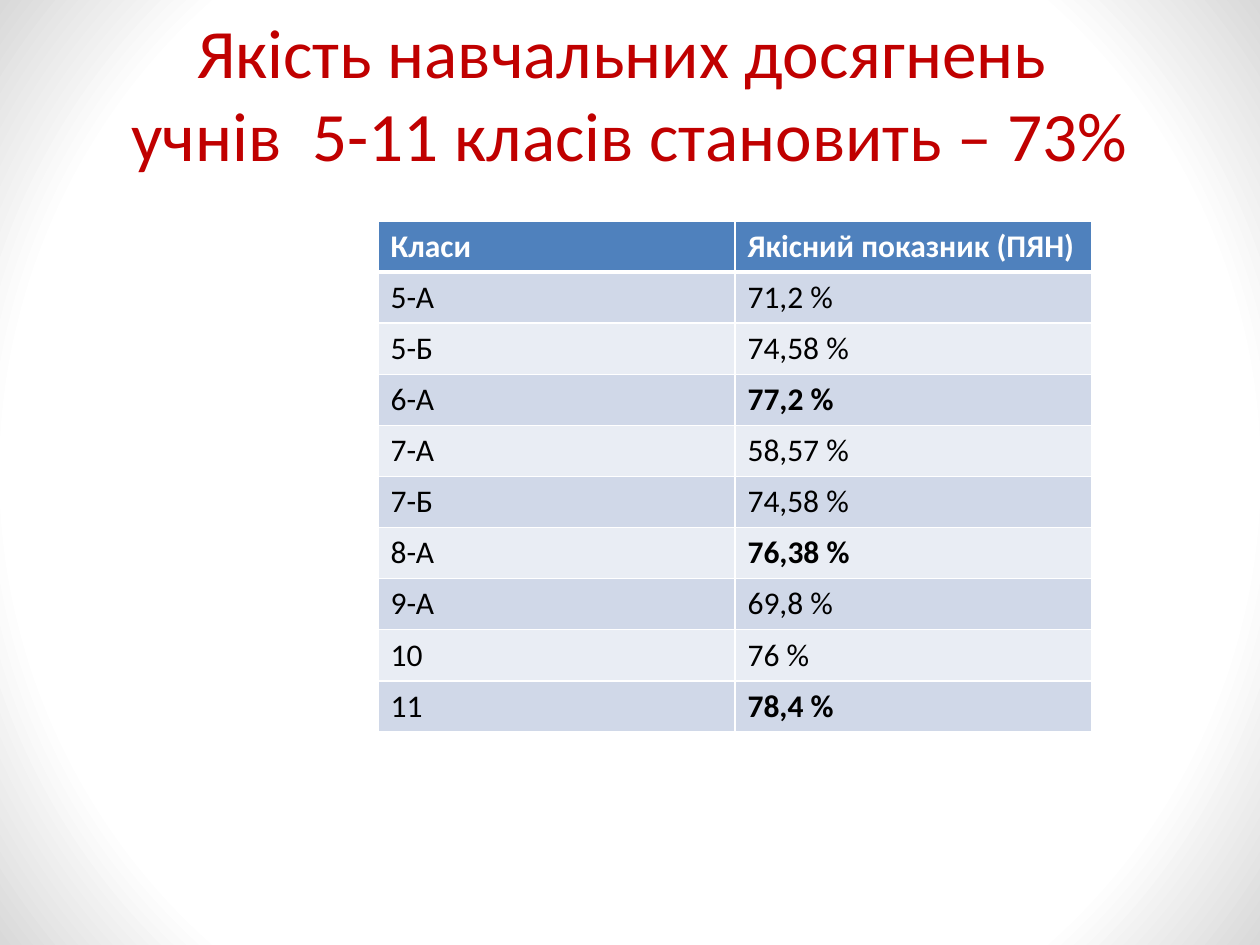
from lxml.etree import SubElement
from pptx import Presentation
from pptx.dml.color import RGBColor
from pptx.enum.text import MSO_ANCHOR, MSO_AUTO_SIZE, PP_ALIGN
from pptx.oxml.ns import qn
from pptx.util import Pt

PX = 914400 // 126
FONT = "Calibri"
WHITE = RGBColor(0xFF, 0xFF, 0xFF)
BLACK = RGBColor(0x00, 0x00, 0x00)
EDGE_GREY = RGBColor(0xD9, 0xD9, 0xD9)
TITLE_RED = RGBColor(0xC0, 0x00, 0x00)
HEADER_BLUE = RGBColor(0x4F, 0x81, 0xBD)
BAND_DARK = RGBColor(0xD0, 0xD8, 0xE8)
BAND_LIGHT = RGBColor(0xE9, 0xED, 0xF4)

TITLE = "Якість навчальних досягнень \vучнів  5-11 класів становить – 73%"
ROWS = [
    ("Класи", "Якісний показник (ПЯН)"),
    ("5-А", "71,2 %"),
    ("5-Б", "74,58 %"),
    ("6-А", "77,2 %"),
    ("7-А", "58,57 %"),
    ("7-Б", "74,58 %"),
    ("8-А", "76,38 %"),
    ("9-А", "69,8 %"),
    ("10", "76 %"),
    ("11", "78,4 %"),
]
HIGHLIGHTS = {"77,2 %", "76,38 %", "78,4 %"}


def add_background(slide):
    """Radial gradient: white centre fading to grey corners."""
    fill = slide.background.fill
    fill.gradient()
    for stop, position, color in zip(fill.gradient_stops, (0.79, 1), (WHITE, EDGE_GREY)):
        stop.position = position
        stop.color.rgb = color
    linear = slide.element.find(".//" + qn("a:lin"))
    gradient = linear.getparent()
    gradient.remove(linear)
    circle = SubElement(gradient, qn("a:path"), path="circle")
    SubElement(circle, qn("a:fillToRect"), l="50000", t="50000", r="50000", b="50000")


def add_title(slide, left, top, width, height):
    title = slide.shapes.title
    title.left, title.top = left * PX, top * PX
    title.width, title.height = width * PX, height * PX
    frame = title.text_frame
    frame.text = TITLE
    frame.word_wrap = True
    frame.auto_size = MSO_AUTO_SIZE.NONE
    frame.vertical_anchor = MSO_ANCHOR.MIDDLE
    paragraph = frame.paragraphs[0]
    paragraph.alignment = PP_ALIGN.CENTER
    paragraph.font.name = FONT
    paragraph.font.size = Pt(39.6)
    paragraph.font.color.rgb = TITLE_RED


def set_borders(cell, top, bottom):
    """White borders; top and bottom widths are in points."""
    properties = cell._tc.get_or_add_tcPr()
    for side, points in (("L", 1), ("R", 1), ("T", top), ("B", bottom)):
        line = SubElement(properties, qn(f"a:ln{side}"), w=str(Pt(points)))
        SubElement(SubElement(line, qn("a:solidFill")), qn("a:srgbClr"), val=str(WHITE))


def add_results_table(slide, left, top, width, height):
    table = slide.shapes.add_table(
        len(ROWS), len(ROWS[0]), left * PX, top * PX, width * PX, height * PX
    ).table
    for row_index, row in enumerate(ROWS):
        is_header = row_index == 0
        band = BAND_DARK if row_index % 2 else BAND_LIGHT
        for column_index, text in enumerate(row):
            cell = table.cell(row_index, column_index)
            cell.text = text
            set_borders(cell, 3 if row_index == 1 else 1, 3 if is_header else 1)
            cell.fill.solid()
            cell.fill.fore_color.rgb = HEADER_BLUE if is_header else band
            font = cell.text_frame.paragraphs[0].font
            font.name = FONT
            font.size = Pt(18)
            font.bold = is_header or text in HIGHLIGHTS
            font.color.rgb = WHITE if is_header else BLACK


def main():
    presentation = Presentation()
    presentation.slide_width = 1260 * PX
    presentation.slide_height = 945 * PX
    slide = presentation.slides.add_slide(presentation.slide_layouts[5])
    add_background(slide)
    add_title(slide, 63, 21, 1134, 142)
    add_results_table(slide, 378, 221, 714, 511)
    presentation.save("out.pptx")


if __name__ == "__main__":
    main()
